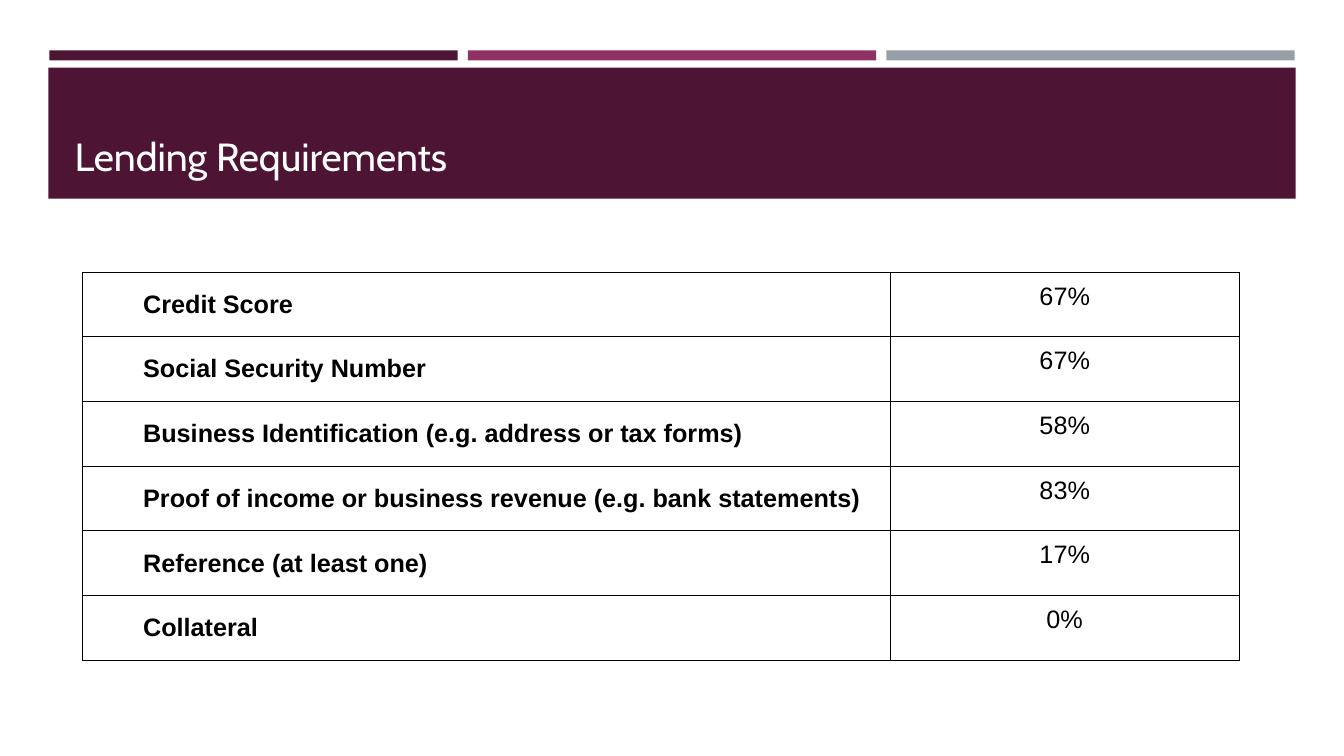
"""Build the lending requirements slide: title band, accent bars and table."""
from pptx import Presentation
from pptx.dml.color import RGBColor
from pptx.enum import shapes, text
from pptx.oxml import parse_xml
from pptx.oxml.ns import nsdecls
from pptx.util import Inches, Pt

TITLE = "Lending Requirements"
REQUIREMENTS = [
    ("Credit Score", "67%"),
    ("Social Security Number", "67%"),
    ("Business Identification (e.g. address or tax forms)", "58%"),
    ("Proof of income or business revenue (e.g. bank statements)", "83%"),
    ("Reference (at least one)", "17%"),
    ("Collateral", "0%"),
]
PLUM, BLACK, WHITE = "4D1434", "000000", "FFFFFF"
ACCENTS = [PLUM, "903163", "969FA7"]
ACCENT_LEFT, ACCENT_WIDTH, ACCENT_STEP = 0.49, 4.05, 4.15
COLUMN_WIDTHS = [8.01, 3.46]
ROW_HEIGHT = 0.642
INSET = Inches(0.1)


def rgb(value):
    return RGBColor.from_string(value)


def add_bar(slide, left, top, width, height, color):
    bar = slide.shapes.add_shape(
        shapes.MSO_SHAPE.RECTANGLE, *map(Inches, (left, top, width, height)))
    bar.shadow.inherit = False
    bar.fill.solid()
    bar.fill.fore_color.rgb = rgb(color)
    bar.line.fill.background()


def write(frame, words, *, size, font, color, bold=False,
          align=text.PP_ALIGN.LEFT, indent=0):
    paragraph = frame.paragraphs[0]
    paragraph.alignment = align
    if indent:
        properties = paragraph._p.get_or_add_pPr()
        properties.set("marL", str(Inches(indent)))
        properties.set("indent", "0")
    run = paragraph.add_run()
    run.text = words
    run.font.size = Pt(size)
    run.font.name = font
    run.font.bold = bold
    run.font.color.rgb = rgb(color)


def set_insets(box):
    box.margin_left = box.margin_right = INSET
    box.margin_top = box.margin_bottom = INSET


def add_borders(cell, color, width):
    properties = cell._tc.get_or_add_tcPr()
    for position, side in enumerate(("lnL", "lnR", "lnT", "lnB")):
        properties.insert(position, parse_xml(
            f'<a:{side} {nsdecls("a")} w="{Pt(width)}"><a:solidFill>'
            f'<a:srgbClr val="{color}"/></a:solidFill></a:{side}>'))


def add_title(slide):
    title = slide.shapes.title
    title.left, title.top, title.width, title.height = map(
        Inches, (0.64, 0.77, 12.06, 1.11))
    frame = title.text_frame
    frame.word_wrap = True
    frame.auto_size = text.MSO_AUTO_SIZE.NONE
    frame.vertical_anchor = text.MSO_ANCHOR.BOTTOM
    set_insets(frame)
    write(frame, TITLE, size=28, font="Cabin", color=WHITE)
    title.element.getparent().append(title.element)


def add_requirements(slide):
    table = slide.shapes.add_table(
        len(REQUIREMENTS), len(COLUMN_WIDTHS), Inches(0.82), Inches(2.7),
        Inches(sum(COLUMN_WIDTHS)), Inches(ROW_HEIGHT * len(REQUIREMENTS))).table
    table.first_row = table.horz_banding = False
    for column, width in zip(table.columns, COLUMN_WIDTHS):
        column.width = Inches(width)
    for row, (requirement, share) in zip(table.rows, REQUIREMENTS):
        row.height = Inches(ROW_HEIGHT)
        for cell in row.cells:
            set_insets(cell)
            cell.fill.background()
            add_borders(cell, BLACK, 0.75)
        name_cell, share_cell = row.cells
        name_cell.vertical_anchor = text.MSO_ANCHOR.MIDDLE
        share_cell.vertical_anchor = text.MSO_ANCHOR.TOP
        write(name_cell.text_frame, requirement, size=18, font="Arial",
              color=BLACK, bold=True, indent=0.5)
        write(share_cell.text_frame, share, size=18, font="Arial",
              color=BLACK, align=text.PP_ALIGN.CENTER)


def main():
    deck = Presentation()
    deck.slide_width, deck.slide_height = Inches(13.33), Inches(7.5)
    slide = deck.slides.add_slide(deck.slide_layouts[5])
    for position, color in enumerate(ACCENTS):
        add_bar(slide, ACCENT_LEFT + position * ACCENT_STEP, 0.5,
                ACCENT_WIDTH, 0.1, color)
    add_bar(slide, 0.48, 0.67, 12.37, 1.3, PLUM)
    add_title(slide)
    add_requirements(slide)
    deck.save("out.pptx")


if __name__ == "__main__":
    main()
